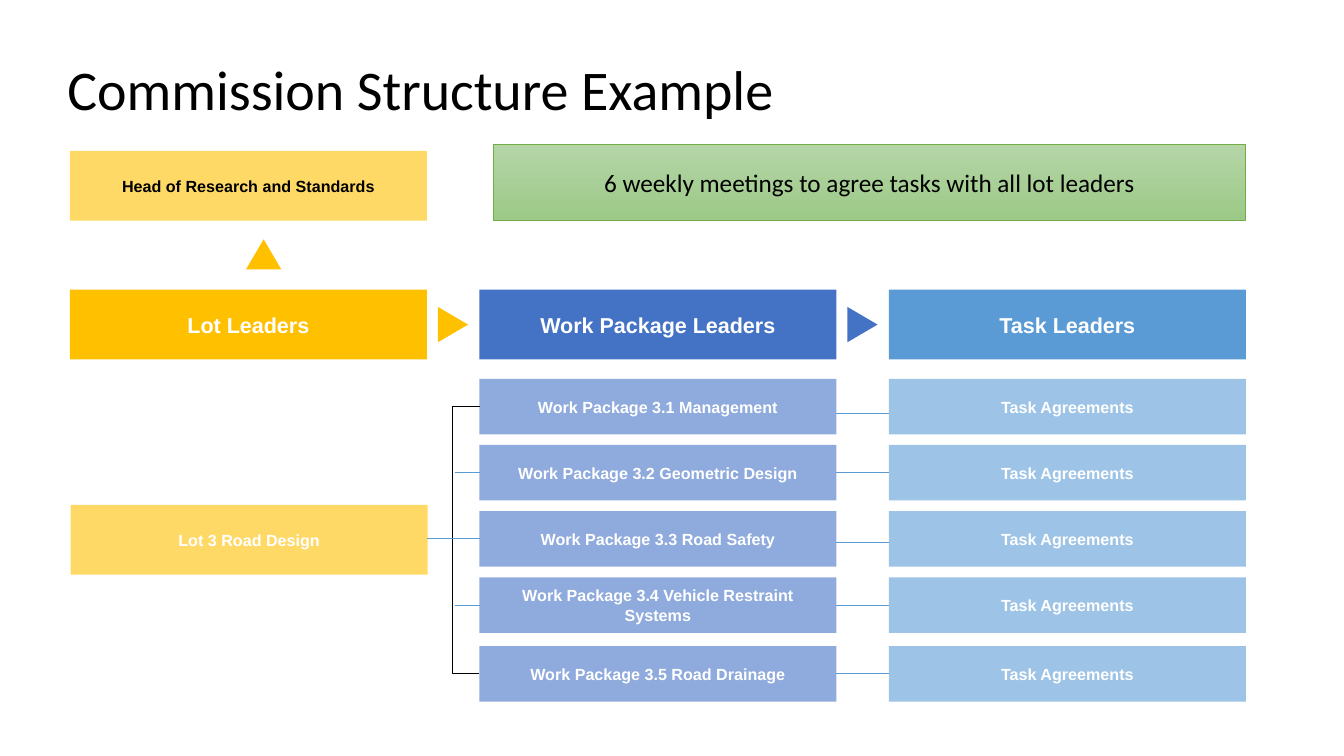
from pptx import Presentation
from pptx.dml.color import RGBColor
from pptx.enum.shapes import MSO_CONNECTOR, MSO_SHAPE
from pptx.enum.text import MSO_ANCHOR, PP_ALIGN
from pptx.oxml.ns import qn
from pptx.util import Cm, Pt
from lxml import etree

RECTANGLE = MSO_SHAPE.RECTANGLE
TRIANGLE = MSO_SHAPE.ISOSCELES_TRIANGLE
STRAIGHT, ELBOW = MSO_CONNECTOR.STRAIGHT, MSO_CONNECTOR.ELBOW
CENTER = PP_ALIGN.CENTER
TOP, MIDDLE = MSO_ANCHOR.TOP, MSO_ANCHOR.MIDDLE


class Theme:
    black, white = "000000", "FFFFFF"
    gold, pale_gold = "FFC000", "FFD966"
    blue, pale_blue = "4472C4", "8FAADC"
    sky, pale_sky = "5B9BD5", "9DC3E6"
    green, green_top, green_bottom = "70AD47", "B5D5A7", "9CC987"
    heading_font, label_font = "Calibri", "Arial"
    title_size, meeting_size, header_size, label_size = 40, 18, 15.4, 11.5
    line_width = 0.5


def add_block(kind, left, top, width, height, fill, text="", size=Theme.label_size,
              color=Theme.white, font=Theme.label_font, bold=True):
    block = slide.shapes.add_shape(kind, Cm(left), Cm(top), Cm(width), Cm(height))
    block.shadow.inherit = False
    block.fill.solid()
    block.fill.fore_color.rgb = RGBColor.from_string(fill)
    block.line.fill.background()
    if text:
        frame = block.text_frame
        frame.text = text
        frame.word_wrap = True
        frame.vertical_anchor = MIDDLE
        frame.margin_left = frame.margin_right = Cm(0.4)
        label = frame.paragraphs[0]
        label.alignment = CENTER
        label.font.size = Pt(size)
        label.font.name = font
        label.font.bold = bold
        label.font.color.rgb = RGBColor.from_string(color)
    return block


def add_link(kind, x1, y1, x2, y2, color):
    link = slide.shapes.add_connector(kind, Cm(x1), Cm(y1), Cm(x2), Cm(y2))
    link.line.color.rgb = RGBColor.from_string(color)
    link.line.width = Pt(Theme.line_width)
    etree.SubElement(link._element.spPr, qn("a:effectLst"))
    return link


presentation = Presentation()
presentation.slide_width, presentation.slide_height = Cm(33.87), Cm(19.05)
slide = presentation.slides.add_slide(presentation.slide_layouts[6])

# Title
title = slide.shapes.add_textbox(Cm(1.45), Cm(1.37), Cm(27.56), Cm(1.22)).text_frame
title.word_wrap = True
title.vertical_anchor = TOP
title.margin_top = Cm(0.2)
title.text = "Commission Structure Example"
heading = title.paragraphs[0]
heading.line_spacing = 0.9
heading.font.size = Pt(Theme.title_size)
heading.font.name = Theme.heading_font
heading.font.color.rgb = RGBColor.from_string(Theme.black)

# Column headers
BOX_WIDTH, HEADER_HEIGHT, ROW_HEIGHT = 9, 1.76, 1.4
lot_left, package_left, task_left = [1.76 + 10.32 * column for column in range(3)]
headers = [
    (lot_left, Theme.gold, "Lot Leaders"),
    (package_left, Theme.blue, "Work Package Leaders"),
    (task_left, Theme.sky, "Task Leaders"),
]
for left, fill, text in headers:
    add_block(RECTANGLE, left, 7.3, BOX_WIDTH, HEADER_HEIGHT, fill, text, Theme.header_size)

# Arrowheads between the levels
ARROW_WIDTH, ARROW_HEIGHT = 0.89, 0.76
for left, top, fill, rotation in [(10.97, 7.8, Theme.gold, 90),
                                  (21.29, 7.8, Theme.blue, 90),
                                  (6.2, 6.03, Theme.gold, 0)]:
    arrow = add_block(TRIANGLE, left, top, ARROW_WIDTH, ARROW_HEIGHT, fill)
    arrow.rotation = rotation

# Head of research and the lot
add_block(RECTANGLE, lot_left, 3.8, BOX_WIDTH, HEADER_HEIGHT, Theme.pale_gold,
          "Head of Research and Standards", color=Theme.black)
add_block(RECTANGLE, lot_left + 0.02, 12.72, BOX_WIDTH, HEADER_HEIGHT, Theme.pale_gold,
          "Lot 3 Road Design")

# Work packages, each with its task agreements: top, height of the link, name
packages = [
    (9.55, 10.42, "Work Package 3.1 Management"),
    (11.21, 11.91, "Work Package 3.2 Geometric Design"),
    (12.88, 13.66, "Work Package 3.3 Road Safety"),
    (14.55, 15.25, "Work Package 3.4 Vehicle Restraint Systems"),
    (16.28, 16.97, "Work Package 3.5 Road Drainage"),
]
for top, link_y, name in packages:
    add_block(RECTANGLE, package_left, top, BOX_WIDTH, ROW_HEIGHT, Theme.pale_blue, name)
    add_block(RECTANGLE, task_left, top, BOX_WIDTH, ROW_HEIGHT, Theme.pale_sky,
              "Task Agreements")
    add_link(STRAIGHT, 21.08, link_y, task_left, link_y, Theme.sky)

# Bracket that joins the first and last packages, drawn to the left of its ends
bracket = add_link(ELBOW, 12.07, 10.24, 12.1, 16.97, Theme.black)
frame = bracket._element.spPr.find(qn("a:xfrm"))
frame.set("rot", "10800000")
frame.set("flipV", "1")
bend = bracket._element.spPr.find(qn("a:prstGeom")).find(qn("a:avLst"))
etree.SubElement(bend, qn("a:gd"), name="adj1", fmla="val 2300000")

# Links from the lot to the middle packages
for start_x, link_y in [(10.77, 13.56), (11.46, 11.91), (11.46, 15.25)]:
    add_link(STRAIGHT, start_x, link_y, 12.09, link_y, Theme.sky)

# Meeting banner
banner = add_block(RECTANGLE, 12.43, 3.64, 18.96, 1.91, Theme.green_top,
                   "6 weekly meetings to agree tasks with all lot leaders",
                   Theme.meeting_size, Theme.black, Theme.heading_font, False)
banner.fill.gradient()
banner.fill.gradient_angle = 270
for stop, color in zip(banner.fill.gradient_stops, (Theme.green_top, Theme.green_bottom)):
    stop.color.rgb = RGBColor.from_string(color)
banner.line.color.rgb = RGBColor.from_string(Theme.green)
banner.line.width = Pt(Theme.line_width)

presentation.save("out.pptx")
